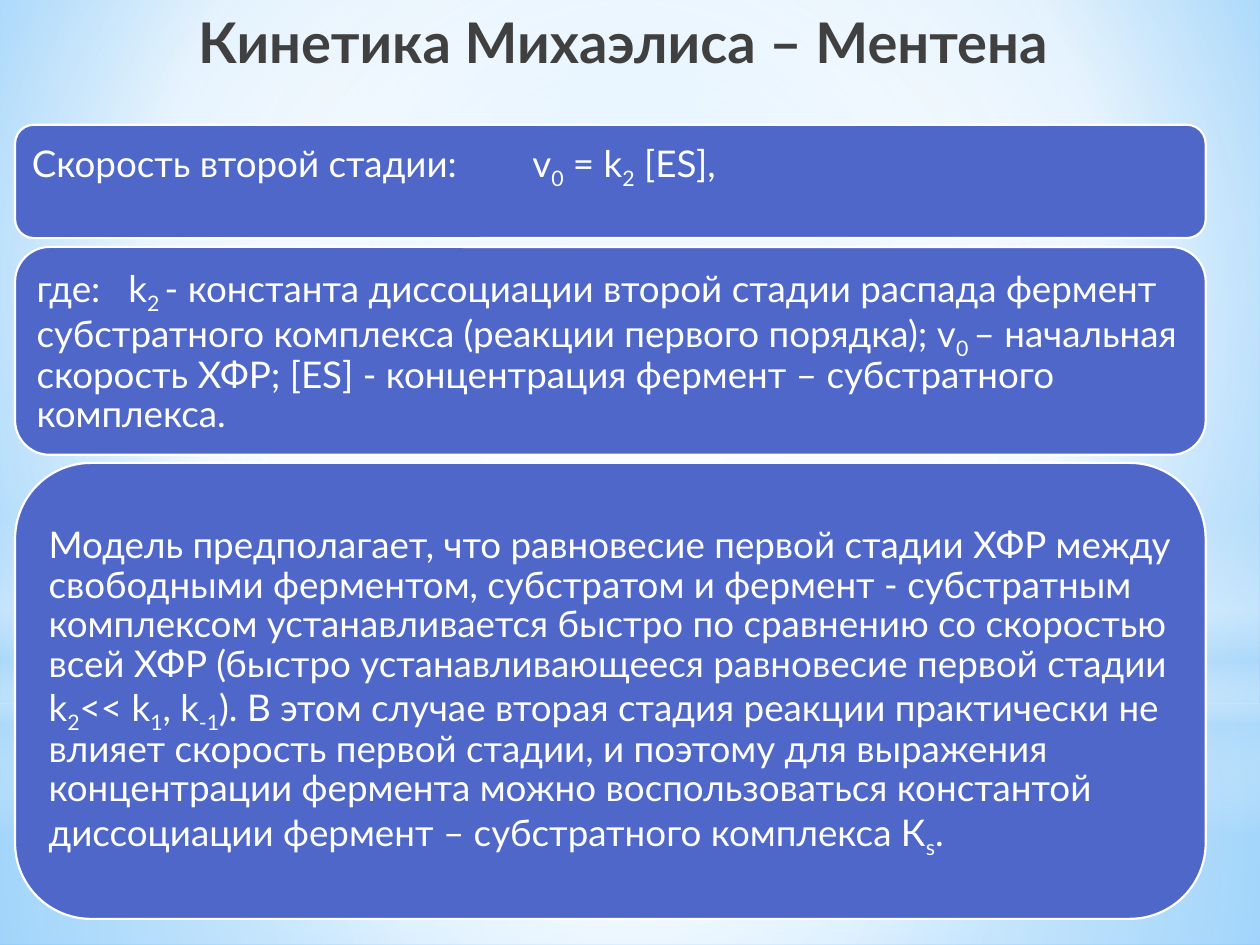
import pptx
import pptx.util
import pptx.oxml
import pptx.oxml.ns
from pptx.dml.color import RGBColor
from pptx.enum.shapes import MSO_SHAPE
from pptx.enum.text import MSO_ANCHOR, MSO_AUTO_SIZE, PP_ALIGN

Pt = pptx.util.Pt
FONT = "Lato"
WIDTH, HEIGHT = 720, 540

# Content: a run is plain text, or a (text,) tuple for a subscript
TITLE = "Кинетика Михаэлиса – Ментена "
CARDS = [
    # top, height, anchor, tab stop, runs
    (71.3, 64.8, MSO_ANCHOR.TOP, 286, [
        "Скорость второй стадии:\tv", ("0",), " = k", ("2",), " [ES],"]),
    (141.1, 118.8, MSO_ANCHOR.MIDDLE, 52.5, [
        "где:\tk", ("2 ",),
        "- константа диссоциации второй стадии распада фермент "
        "субстратного комплекса (реакции первого порядка); v", ("0 ",),
        "– начальная скорость ХФР; [ES] - концентрация фермент – "
        "субстратного комплекса."]),
    (264.5, 260.6, MSO_ANCHOR.MIDDLE, None, [
        "Модель предполагает, что равновесие первой стадии ХФР между "
        "свободными ферментом, субстратом и фермент - субстратным "
        "комплексом устанавливается быстро по сравнению со скоростью "
        "всей ХФР (быстро устанавливающееся равновесие первой стадии k",
        ("2",), "<< k", ("1",), ", k", ("-1",),
        "). В этом случае вторая стадия реакции практически не влияет "
        "скорость первой стадии, и поэтому для выражения концентрации "
        "фермента можно воспользоваться константой диссоциации фермент – "
        "субстратного комплекса К", ("s",), "."]),
]
CARD_LEFT, CARD_WIDTH, CARD_INSET = 8.6, 680.4, 6.5

# Backdrop: stops are (position %, colour, opacity %)
CENTRE = (50, 50, 50, 50)
BACKGROUND = [(0, "9ED5FF", 100), (60, "FFFFFF", 100), (100, "5BB9FF", 100)]
LAYERS = [
    # preset, top, height, stops, focus (None is a vertical gradient)
    (MSO_SHAPE.RECTANGLE, 401.8, 138.2,
     [(0, "FFFFFF", 91), (37, "FFFFFF", 76), (100, "B4DCFA", 79)], CENTRE),
    (MSO_SHAPE.RECTANGLE, 0, 401.8,
     [(0, "FFFFFF", 89), (48, "FFFFFF", 62), (100, "B4DCFA", 79)], CENTRE),
    (MSO_SHAPE.RECTANGLE, 296.6, 180,
     [(0, "FFFFFF", 0), (29, "FFFFFF", 30), (45, "B4DCFA", 40),
      (55, "FFFFFF", 26), (65, "B4DCFA", 60), (100, "FFFFFF", 0)], None),
    (MSO_SHAPE.OVAL, 126, 401.8,
     [(0, "FFFFFF", 100), (56, "FFFFFF", 0)], CENTRE),
]


def colour(value):
    return RGBColor.from_string(value)


def set_gradient(owner, fill, stops, focus):
    """Swap a fresh solid fill for a gradient with transparency."""
    fill.solid()
    marks = "".join(
        f'<a:gs pos="{position * 1000}"><a:srgbClr val="{value}">'
        f'<a:alpha val="{opacity * 1000}"/></a:srgbClr></a:gs>'
        for position, value, opacity in stops)
    if focus:
        sides = " ".join(f'{side}="{share * 1000}"'
                         for side, share in zip("ltrb", focus))
        shade = f'<a:path path="circle"><a:fillToRect {sides}/></a:path>'
    else:
        shade = '<a:lin ang="5400000" scaled="0"/>'
    gradient = pptx.oxml.parse_xml(
        f'<a:gradFill {pptx.oxml.ns.nsdecls("a")} rotWithShape="1">'
        f'<a:gsLst>{marks}</a:gsLst>{shade}</a:gradFill>')
    solid = owner.xpath(".//a:solidFill")[0]
    solid.getparent().replace(solid, gradient)


def add_shape(page, preset, left, top, width, height):
    shape = page.shapes.add_shape(
        preset, Pt(left), Pt(top), Pt(width), Pt(height))
    shape.shadow.inherit = False
    return shape


def add_span(para, text, size, value, bold=False, subscript=False):
    span = para.add_run()
    span.text = text
    span.font.name = FONT
    span.font.size = Pt(size)
    span.font.bold = bold
    span.font.color.rgb = colour(value)
    if subscript:
        span.font._element.set("baseline", "-25000")


def add_card(page, top, height, anchor, tab, runs):
    card = add_shape(page, MSO_SHAPE.ROUNDED_RECTANGLE,
                     CARD_LEFT, top, CARD_WIDTH, height)
    card.fill.solid()
    card.fill.fore_color.rgb = colour("4E67C8")
    card.line.color.rgb = colour("FFFFFF")
    card.line.width = Pt(1.25)
    frame = card.text_frame
    frame.word_wrap = True
    frame.vertical_anchor = anchor
    frame.margin_left = frame.margin_right = Pt(CARD_INSET)
    frame.margin_top = frame.margin_bottom = Pt(CARD_INSET)
    para = frame.paragraphs[0]
    para.alignment = PP_ALIGN.LEFT
    para.line_spacing = 0.9
    if tab:
        para._p.get_or_add_pPr().append(pptx.oxml.parse_xml(
            f'<a:tabLst {pptx.oxml.ns.nsdecls("a")}>'
            f'<a:tab pos="{int(Pt(tab))}" algn="l"/></a:tabLst>'))
    for run in runs:
        subscript = isinstance(run, tuple)
        add_span(para, run[0] if subscript else run, 21, "FFFFFF",
                 subscript=subscript)


deck = pptx.Presentation()
deck.slide_width, deck.slide_height = Pt(WIDTH), Pt(HEIGHT)
page = deck.slides.add_slide(deck.slide_layouts[5])

# Backdrop
set_gradient(page._element, page.background.fill, BACKGROUND, (20, 10, 20, 60))
for preset, top, height, stops, focus in LAYERS:
    layer = add_shape(page, preset, 0, top, WIDTH, height)
    layer.line.fill.background()
    set_gradient(layer._element, layer.fill, stops, focus)

# Title, raised above the backdrop
title = page.shapes.title
title._element.getparent().append(title._element)
title.left, title.top, title.width, title.height = Pt(0), Pt(0), Pt(WIDTH), Pt(47.5)
title.text_frame.auto_size = MSO_AUTO_SIZE.NONE
title.text_frame.vertical_anchor = MSO_ANCHOR.MIDDLE
heading = title.text_frame.paragraphs[0]
heading.alignment = PP_ALIGN.CENTER
add_span(heading, TITLE, 32, "404040", bold=True)

# Cards
for card in CARDS:
    add_card(page, *card)

deck.save("out.pptx")
